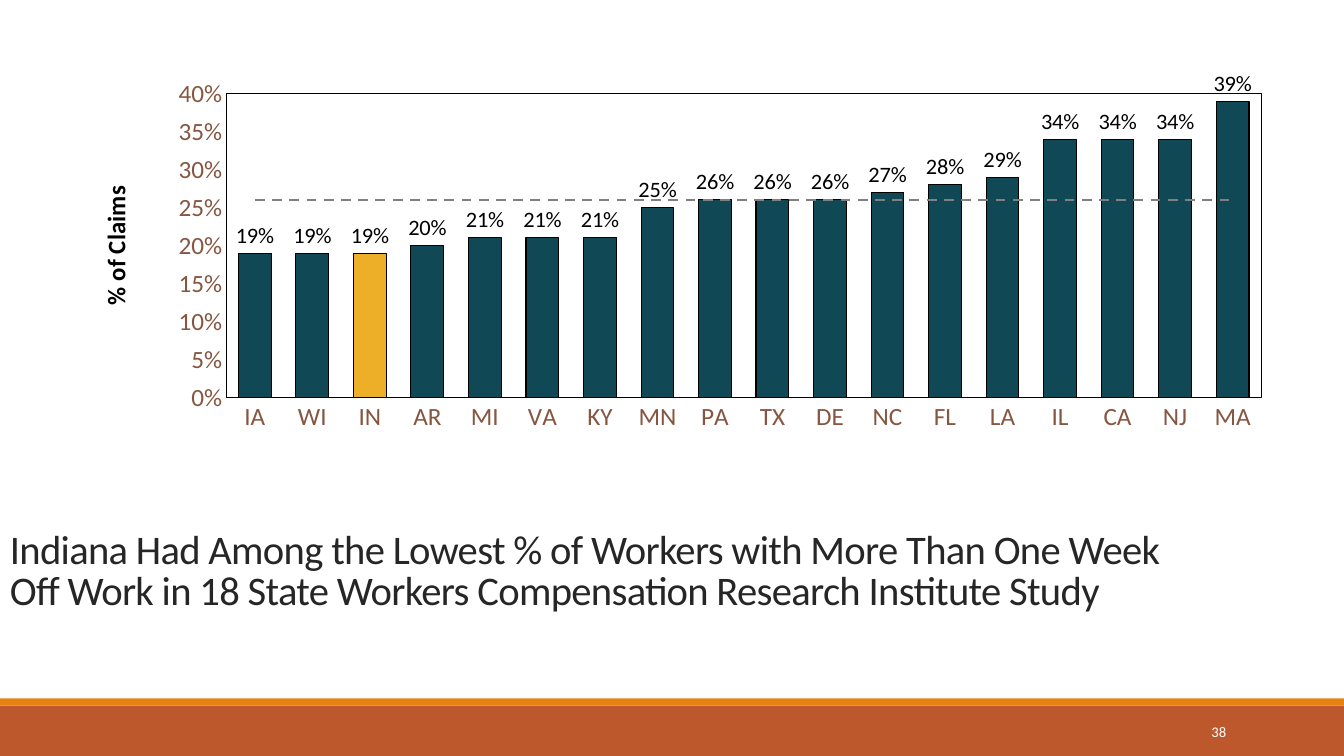
"""Build the slide on workers with more than one week off work."""
from dataclasses import dataclass

from lxml import etree
from pptx import Presentation
from pptx.chart.chart import Chart
from pptx.chart.data import CategoryChartData
from pptx.dml.color import RGBColor
from pptx.dml.fill import FillFormat
from pptx.dml.line import LineFormat
from pptx.enum.chart import XL_CHART_TYPE, XL_LABEL_POSITION, XL_TICK_MARK
from pptx.enum.dml import MSO_LINE
from pptx.enum.shapes import MSO_SHAPE
from pptx.enum.text import MSO_ANCHOR, PP_ALIGN
from pptx.oxml import parse_xml
from pptx.oxml.ns import nsdecls, qn
from pptx.slide import Slide
from pptx.text.text import Font
from pptx.util import Inches, Pt

RECT = MSO_SHAPE.RECTANGLE
COLUMN = XL_CHART_TYPE.COLUMN_CLUSTERED
OUTSIDE = XL_LABEL_POSITION.OUTSIDE_END
NO_TICK = XL_TICK_MARK.NONE
DASH = MSO_LINE.DASH
LEFT, RIGHT = PP_ALIGN.LEFT, PP_ALIGN.RIGHT
MIDDLE, BOTTOM = MSO_ANCHOR.MIDDLE, MSO_ANCHOR.BOTTOM

FACE = "Calibri"
BLACK, BROWN, GRAY = "000000", "865640", "808080"
TEAL, GOLD = "114855", "EEAF28"
FOCUS = "IN"
MEAN = 0.26
SHARES = {
    "IA": 0.19, "WI": 0.19, "IN": 0.19, "AR": 0.20, "MI": 0.21, "VA": 0.21,
    "KY": 0.21, "MN": 0.25, "PA": 0.26, "TX": 0.26, "DE": 0.26, "NC": 0.27,
    "FL": 0.28, "LA": 0.29, "IL": 0.34, "CA": 0.34, "NJ": 0.34, "MA": 0.39,
}


@dataclass
class Box:
    left: float
    top: float
    width: float
    height: float

    def place(self) -> tuple:
        return tuple(map(Inches, (self.left, self.top, self.width, self.height)))


@dataclass
class Band:
    box: Box
    color: str


BANDS = [
    Band(Box(0, 7, 13.33, 0.5), "BD582C"),
    Band(Box(0, 6.93, 13.33, 0.07), "E48312"),
]


def rgb(color: str) -> RGBColor:
    return RGBColor.from_string(color)


def paint(fill: FillFormat, color: str) -> None:
    fill.solid()
    fill.fore_color.rgb = rgb(color)


def stroke(line: LineFormat, color: str, width: float = 0.75) -> None:
    paint(line.fill, color)
    line.width = Pt(width)


def style(font: Font, size: float, color: str, bold: bool = False) -> None:
    font.name, font.size, font.bold = FACE, Pt(size), bold
    font.color.rgb = rgb(color)


def add_band(slide: Slide, band: Band) -> None:
    shape = slide.shapes.add_shape(RECT, *band.box.place())
    shape.shadow.inherit = False
    paint(shape.fill, band.color)
    shape.line.fill.background()


def add_text(slide: Slide, text: str, box: Box, *, size: float, color: str,
             align: PP_ALIGN = LEFT, anchor: MSO_ANCHOR = MIDDLE,
             lead: float = 1.0, track: int = 0) -> None:
    frame = slide.shapes.add_textbox(*box.place()).text_frame
    frame.word_wrap = True
    frame.vertical_anchor = anchor
    para = frame.paragraphs[0]
    para.alignment, para.line_spacing = align, lead
    run = para.add_run()
    run.text = text
    style(run.font, size, color)
    if track:
        run._r.get_or_add_rPr().set("spc", str(track))


def clear(node: etree._Element, tag: str) -> None:
    for old in node.findall(qn(tag)):
        node.remove(old)


def layout(spots: dict[str, float], inner: bool = False) -> etree._Element:
    node = parse_xml(f"<c:layout {nsdecls('c')}><c:manualLayout/></c:layout>")
    if inner:
        etree.SubElement(node[0], qn("c:layoutTarget")).set("val", "inner")
    for key in ("x", "y"):
        etree.SubElement(node[0], qn(f"c:{key}Mode")).set("val", "edge")
    for key, spot in spots.items():
        etree.SubElement(node[0], qn(f"c:{key}")).set("val", str(spot))
    return node


def move_line(chart: Chart) -> None:
    bars = chart._chartSpace.find(".//" + qn("c:barChart"))
    mean = bars.findall(qn("c:ser"))[1]
    clear(mean, "c:invertIfNegative")
    mark = parse_xml(f'<c:marker {nsdecls("c")}><c:symbol val="none"/></c:marker>')
    mean.find(qn("c:spPr")).addnext(mark)
    etree.SubElement(mean, qn("c:smooth")).set("val", "0")
    group = parse_xml(
        f'<c:lineChart {nsdecls("c")}><c:grouping val="standard"/>'
        '<c:varyColors val="0"/><c:marker val="1"/></c:lineChart>')
    group.insert(2, mean)
    for axis in bars.findall(qn("c:axId")):
        etree.SubElement(group, qn("c:axId")).set("val", axis.get("val"))
    bars.addnext(group)


def add_chart(slide: Slide, box: Box) -> None:
    data = CategoryChartData(number_format="0%")
    data.categories = list(SHARES)
    data.add_series("Series 1", list(SHARES.values()))
    data.add_series("Series 2", [MEAN] * len(SHARES))
    chart = slide.shapes.add_chart(COLUMN, *box.place(), data).chart
    chart.has_legend = chart.has_title = False
    style(chart.font, 18, BLACK)

    for axis in (chart.category_axis, chart.value_axis):
        axis.has_major_gridlines = False
        axis.major_tick_mark = axis.minor_tick_mark = NO_TICK
        style(axis.tick_labels.font, 18, BROWN)
        stroke(axis.format.line, BLACK)
    scale = chart.value_axis
    scale.minimum_scale, scale.maximum_scale, scale.major_unit = 0, 0.4, 0.05
    scale.tick_labels.number_format = "0%"
    scale.tick_labels.number_format_is_linked = False
    frame = scale.axis_title.text_frame
    frame.text = "% of Claims"
    style(frame.paragraphs[0].runs[0].font, 18, BLACK, bold=True)
    title = scale.axis_title._element
    clear(title, "c:layout")
    title.find(qn("c:tx")).addnext(layout({"x": 0.02, "y": 0.27}))

    plot = chart.plots[0]
    plot.gap_width, plot.overlap, plot.vary_by_categories = 75, 0, False
    bars, mean = plot.series
    point = bars.points[list(SHARES).index(FOCUS)]
    for item, color in ((bars, TEAL), (point, GOLD)):
        paint(item.format.fill, color)
        stroke(item.format.line, BLACK)
    tags = bars.data_labels
    tags.show_value, tags.position = True, OUTSIDE
    tags.number_format, tags.number_format_is_linked = "0%", False
    style(tags.font, 16, BLACK)
    stroke(mean.format.line, GRAY, 1.75)
    mean.format.line.dash_style = DASH
    move_line(chart)

    area = chart._chartSpace.find(".//" + qn("c:plotArea"))
    clear(area, "c:layout")
    area.insert(0, layout({"x": 0.13, "y": 0.04, "w": 0.86, "h": 0.78}, True))
    area.append(parse_xml(
        f'<c:spPr {nsdecls("c", "a")}><a:noFill/><a:ln w="{Pt(0.75)}"><a:solidFill>'
        f'<a:srgbClr val="{BLACK}"/></a:solidFill></a:ln></c:spPr>'))


def main() -> None:
    deck = Presentation()
    deck.slide_width, deck.slide_height = Inches(13.33), Inches(7.5)
    slide = deck.slides.add_slide(deck.slide_layouts[6])
    for band in BANDS:
        add_band(slide, band)
    add_text(slide, "38", Box(10.83, 7.06, 1.43, 0.4),
             size=10.5, color="FFFFFF", align=RIGHT)
    add_text(slide, "Indiana Had Among the Lowest % of Workers with More Than One Week "
             "Off Work in 18 State Workers Compensation Research Institute Study",
             Box(0, 4.98, 11.93, 1.16), size=29, color="262626",
             anchor=BOTTOM, lead=0.85, track=-50)
    add_chart(slide, Box(0.69, 0.7, 11.94, 3.94))
    deck.save("out.pptx")


if __name__ == "__main__":
    main()
